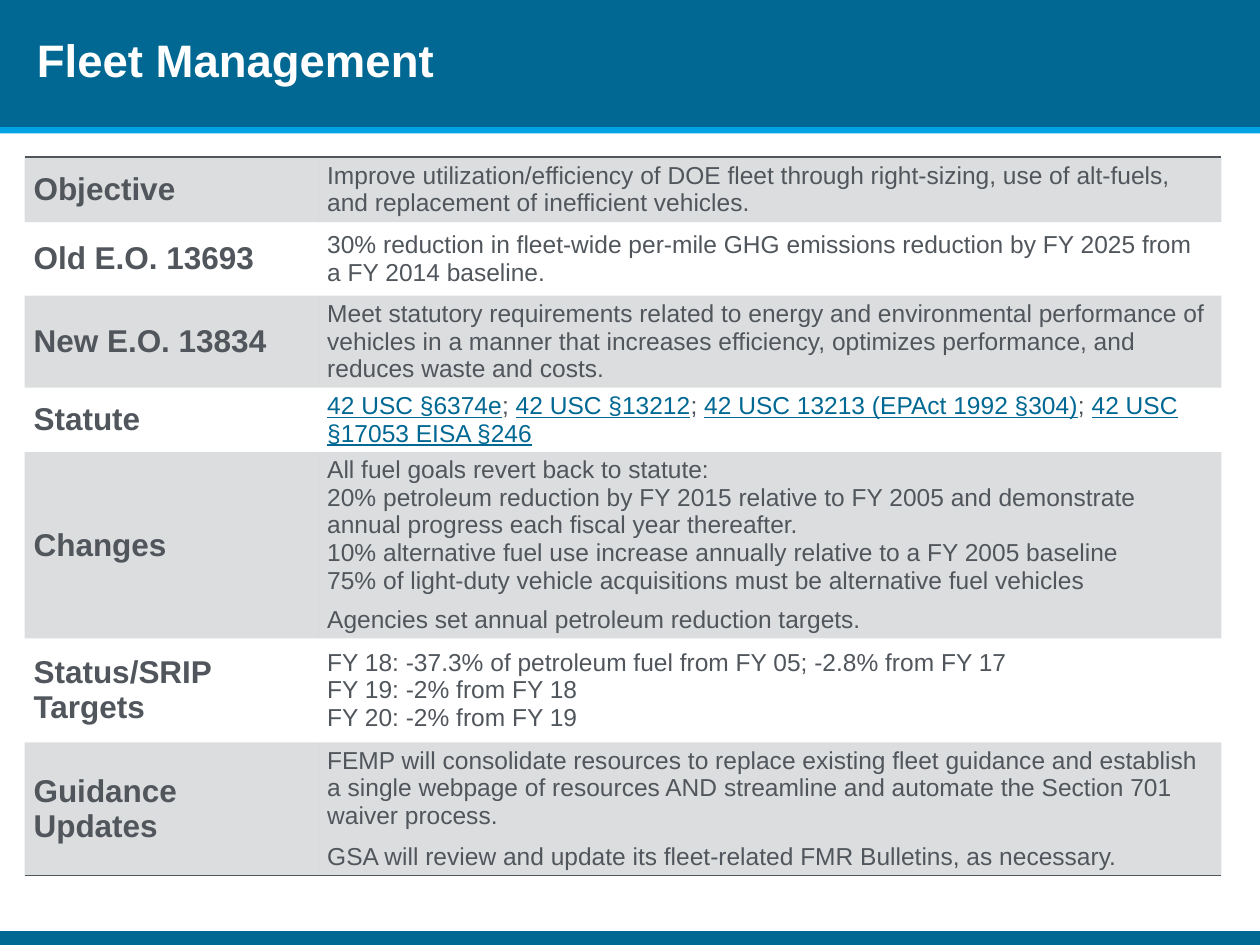
from lxml import etree
from pptx import Presentation
from pptx.dml.color import RGBColor
from pptx.enum.shapes import MSO_SHAPE
from pptx.enum.text import MSO_ANCHOR
from pptx.oxml.ns import qn
from pptx.util import Pt

RECTANGLE = MSO_SHAPE.RECTANGLE
MIDDLE = MSO_ANCHOR.MIDDLE

BLUE = RGBColor(0x00, 0x68, 0x92)
LIGHT_BLUE = RGBColor(0x00, 0xA4, 0xE4)
GRAY = RGBColor(0x50, 0x56, 0x5C)
WHITE = RGBColor(0xFF, 0xFF, 0xFF)
FONT = "Arial"

# Content: label, row height, space before the last paragraph, paragraphs
TITLE = "Fleet Management"
ROWS = [
    ("Objective", 37.1, 0, [
        "Improve utilization/efficiency of DOE fleet through right-sizing, "
        "use of alt-fuels, and replacement of inefficient vehicles."]),
    ("Old E.O. 13693", 42, 0, [
        "30% reduction in fleet-wide per-mile GHG emissions reduction by "
        "FY 2025 from a FY 2014 baseline."]),
    ("New E.O. 13834", 52.6, 0, [
        "Meet statutory requirements related to energy and environmental "
        "performance of vehicles in a manner that increases efficiency, "
        "optimizes performance, and reduces waste and costs."]),
    ("Statute", 36.9, 0, [
        "42 USC §6374e; 42 USC §13212; 42 USC 13213 (EPAct 1992 §304); "
        "42 USC §17053 EISA §246"]),
    ("Changes", 106.5, 6.9, [
        "All fuel goals revert back to statute:",
        "20% petroleum reduction by FY 2015 relative to FY 2005 and "
        "demonstrate annual progress each fiscal year thereafter.",
        "10% alternative fuel use increase annually relative to a FY 2005 baseline",
        "75% of light-duty vehicle acquisitions must be alternative fuel vehicles",
        "Agencies set annual petroleum reduction targets."]),
    ("Status/SRIP Targets", 59.4, 0, [
        "FY 18: -37.3% of petroleum fuel from FY 05; -2.8% from FY 17",
        "FY 19: -2% from FY 18",
        "FY 20: -2% from FY 19"]),
    ("Guidance Updates", 75.8, 8, [
        "FEMP will consolidate resources to replace existing fleet guidance "
        "and establish a single webpage of resources AND streamline and "
        "automate the Section 701 waiver process.",
        "GSA will review and update its fleet-related FMR Bulletins, as necessary."]),
]
CITATION_ROW = "Statute"
COLUMN_WIDTHS = (167.8, 516.2)
BANDS = [(0, 72.7, BLUE), (532.1, 7.9, BLUE), (72.7, 3.6, LIGHT_BLUE)]


def style_font(font, size, color, bold=False):
    font.name = FONT
    font.size = Pt(size)
    font.bold = bold
    font.color.rgb = color


def fill_cell(cell, paragraphs, size, bold, gap):
    cell.vertical_anchor = MIDDLE
    cell.margin_left = cell.margin_right = Pt(5.2)
    cell.margin_top = cell.margin_bottom = Pt(2.6)
    cell.text_frame.text = "\n".join(paragraphs)
    for paragraph in cell.text_frame.paragraphs:
        style_font(paragraph.font, size, GRAY, bold)
        for run in paragraph.runs:
            style_font(run.font, size, GRAY, bold)
    if gap:
        paragraph.space_before = Pt(gap)


def set_citations(paragraph, size):
    citations = paragraph.text.split("; ")
    paragraph.text = ""
    for index, citation in enumerate(citations):
        if index:
            separator = paragraph.add_run()
            separator.text = "; "
            style_font(separator.font, size, GRAY)
        run = paragraph.add_run()
        run.text = citation
        style_font(run.font, size, BLUE)
        run.font.underline = True


def shade_cell(cell, shaded):
    if not shaded:
        cell.fill.background()
        return
    cell.fill.solid()
    cell.fill.fore_color.rgb = GRAY
    color = cell._tc.tcPr.find(".//" + qn("a:srgbClr"))
    etree.SubElement(color, qn("a:alpha"), val="20000")


def set_borders(cell, visible):
    for index, side in enumerate(("lnL", "lnR", "lnT", "lnB")):
        line = etree.Element(qn("a:" + side), w=str(Pt(1)))
        if side in visible:
            solid = etree.SubElement(line, qn("a:solidFill"))
            etree.SubElement(solid, qn("a:srgbClr"), val=str(GRAY))
        else:
            etree.SubElement(line, qn("a:noFill"))
        cell._tc.tcPr.insert(index, line)


presentation = Presentation()
presentation.slide_width, presentation.slide_height = Pt(720), Pt(540)
slide = presentation.slides.add_slide(presentation.slide_layouts[6])

# Header and footer bands
for top, height, color in BANDS:
    band = slide.shapes.add_shape(RECTANGLE, 0, Pt(top), Pt(720), Pt(height))
    band.shadow.inherit = False
    band.fill.solid()
    band.fill.fore_color.rgb = color
    band.line.fill.background()

# Table
table = slide.shapes.add_table(
    len(ROWS), 2, Pt(14), Pt(89.8), Pt(sum(COLUMN_WIDTHS)),
    Pt(sum(row[1] for row in ROWS))).table
table.first_row = table.horz_banding = False
for column, width in zip(table.columns, COLUMN_WIDTHS):
    column.width = Pt(width)
for index, (label, height, gap, paragraphs) in enumerate(ROWS):
    table.rows[index].height = Pt(height)
    label_cell, detail_cell = table.rows[index].cells
    fill_cell(label_cell, [label], 18, True, 0)
    fill_cell(detail_cell, paragraphs, 14, False, gap)
    if label == CITATION_ROW:
        set_citations(detail_cell.text_frame.paragraphs[0], 14)
    borders = {0: ("lnT",), len(ROWS) - 1: ("lnB",)}.get(index, ())
    for cell in (label_cell, detail_cell):
        shade_cell(cell, index % 2 == 0)
        set_borders(cell, borders)

# Title
title = slide.shapes.add_textbox(Pt(14), 0, Pt(445.7), Pt(71.3))
title.text_frame.word_wrap = True
title.text_frame.vertical_anchor = MIDDLE
title.text_frame.text = TITLE
paragraph = title.text_frame.paragraphs[0]
paragraph.line_spacing = Pt(28)
style_font(paragraph.runs[0].font, 26, WHITE, True)

presentation.save("out.pptx")
